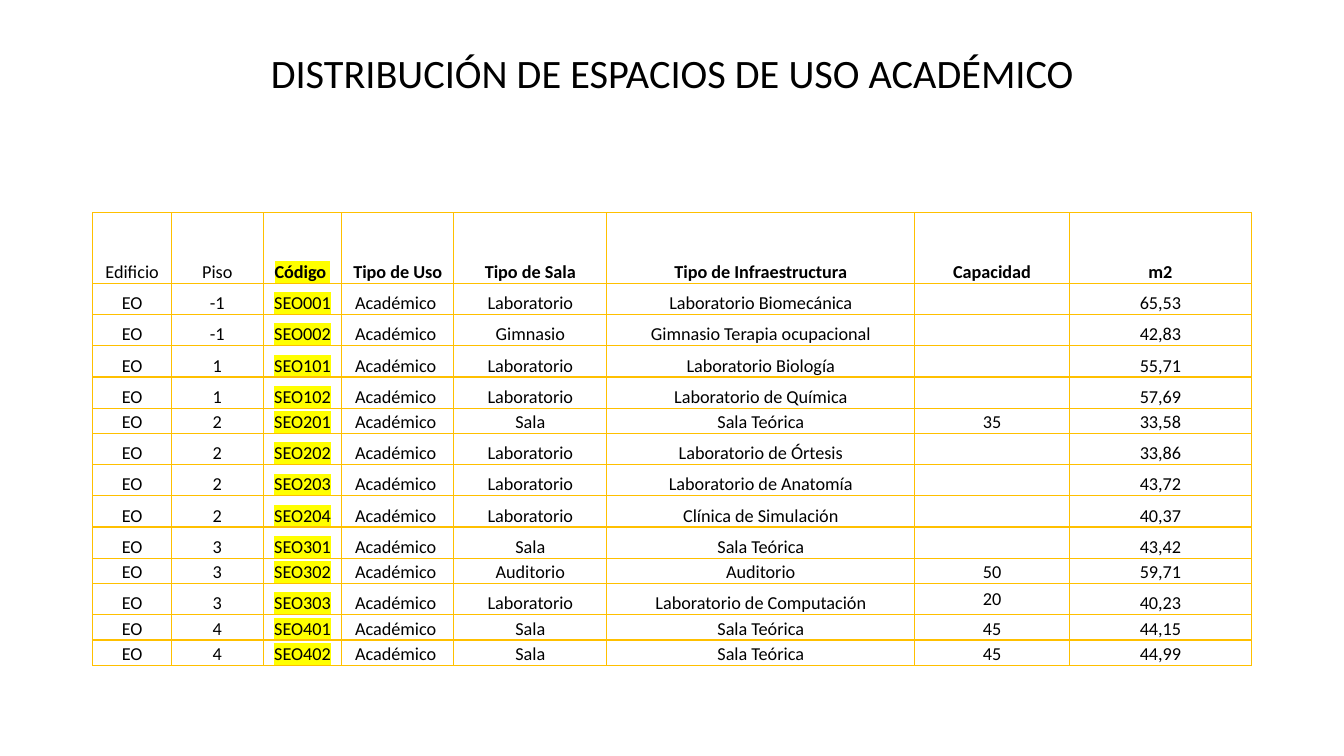
import dataclasses

import lxml.etree
import pptx
import pptx.dml.color
import pptx.enum.text
import pptx.oxml.ns
import pptx.table
import pptx.text.text
import pptx.util

Inches = pptx.util.Inches
Pt = pptx.util.Pt
qn = pptx.oxml.ns.qn
MSO_ANCHOR = pptx.enum.text.MSO_ANCHOR
PP_ALIGN = pptx.enum.text.PP_ALIGN

BLACK = pptx.dml.color.RGBColor(0x00, 0x00, 0x00)
YELLOW = pptx.dml.color.RGBColor(0xFF, 0xFF, 0x00)
GOLD = pptx.dml.color.RGBColor(0xFF, 0xC0, 0x00)
FONT = "Calibri"

HEADERS = ("Edificio", "Piso", "Código ", "Tipo de Uso", "Tipo de Sala",
           "Tipo de Infraestructura", "Capacidad", "m2")
COLUMN_WIDTHS = (0.78, 0.91, 0.78, 1.11, 1.52, 3.05, 1.54, 1.8)
CODE_COLUMN = HEADERS.index("Código ")
CAPACITY_COLUMN = HEADERS.index("Capacidad")
HEADER_HEIGHT = 0.7
TALL_ROW = 0.31
SHORT_ROW = 0.25


@dataclasses.dataclass(frozen=True)
class Room:
    floor: str
    code: str
    kind: str
    facility: str
    area: str
    capacity: str = ""
    height: float = TALL_ROW
    capacity_anchor: MSO_ANCHOR = MSO_ANCHOR.BOTTOM

    def cells(self) -> tuple[str, ...]:
        return ("EO", self.floor, self.code, "Académico ", self.kind,
                self.facility, self.capacity, self.area)


ROOMS = (
    Room("-1", "SEO001", "Laboratorio", "Laboratorio Biomecánica", "65,53"),
    Room("-1", "SEO002", "Gimnasio", "Gimnasio Terapia ocupacional", "42,83"),
    Room("1", "SEO101", "Laboratorio", "Laboratorio Biología", "55,71"),
    Room("1", "SEO102", "Laboratorio", "Laboratorio de Química", "57,69"),
    Room("2", "SEO201", "Sala", "Sala Teórica", "33,58", "35", SHORT_ROW),
    Room("2", "SEO202", "Laboratorio", "Laboratorio de Órtesis", "33,86"),
    Room("2", "SEO203", "Laboratorio", "Laboratorio de Anatomía", "43,72"),
    Room("2", "SEO204", "Laboratorio", "Clínica de Simulación", "40,37"),
    Room("3", "SEO301", "Sala", "Sala Teórica", "43,42"),
    Room("3", "SEO302", "Auditorio", "Auditorio", "59,71", "50", SHORT_ROW),
    Room("3", "SEO303", "Laboratorio", "Laboratorio de Computación", "40,23", "20",
         capacity_anchor=MSO_ANCHOR.MIDDLE),
    Room("4", "SEO401", "Sala", "Sala Teórica", "44,15", "45", SHORT_ROW),
    Room("4", "SEO402", "Sala", "Sala Teórica", "44,99", "45", SHORT_ROW),
)


def add_run(paragraph: pptx.text.text._Paragraph, text: str, size: float,
            bold: bool = False, highlighted: bool = False) -> None:
    run = paragraph.add_run()
    run.text = text
    run.font.size = Pt(size)
    run.font.bold = bold
    run.font.color.rgb = BLACK
    if highlighted:
        highlight = lxml.etree.SubElement(run.font._element, qn("a:highlight"))
        lxml.etree.SubElement(highlight, qn("a:srgbClr"), val=str(YELLOW))
    run.font.name = FONT


def add_borders(cell: pptx.table._Cell) -> None:
    properties = cell._tc.get_or_add_tcPr()
    for side in ("a:lnL", "a:lnR", "a:lnT", "a:lnB"):
        line = lxml.etree.SubElement(properties, qn(side), w=str(Pt(1)))
        fill = lxml.etree.SubElement(line, qn("a:solidFill"))
        lxml.etree.SubElement(fill, qn("a:srgbClr"), val=str(GOLD))


def fill_cell(cell: pptx.table._Cell, text: str, bold: bool, highlighted: bool,
              anchor: MSO_ANCHOR) -> None:
    add_borders(cell)
    cell.fill.background()
    cell.margin_left = cell.margin_right = cell.margin_top = Inches(0.01)
    cell.margin_bottom = 0
    cell.vertical_anchor = anchor
    paragraph = cell.text_frame.paragraphs[0]
    paragraph.alignment = PP_ALIGN.CENTER
    if text:
        add_run(paragraph, text, 13, bold, highlighted)
    else:
        paragraph.font.size = Pt(13)


def add_title(slide: pptx.slide.Slide) -> None:
    title = slide.shapes.title
    title.left, title.top = Inches(1.76), Inches(0.53)
    title.width, title.height = Inches(9.82), Inches(0.86)
    frame = title.text_frame
    frame.word_wrap = True
    frame.auto_size = pptx.enum.text.MSO_AUTO_SIZE.NONE
    frame.margin_top = 0
    frame.vertical_anchor = MSO_ANCHOR.TOP
    heading = frame.paragraphs[0]
    heading.alignment = PP_ALIGN.CENTER
    heading.line_spacing = 0.9
    add_run(heading, "DISTRIBUCIÓN DE ESPACIOS DE USO ACADÉMICO", 28.8)


def add_room_table(slide: pptx.slide.Slide) -> None:
    heights = [HEADER_HEIGHT] + [room.height for room in ROOMS]
    table = slide.shapes.add_table(
        len(heights), len(HEADERS), Inches(0.92), Inches(2.11),
        Inches(sum(COLUMN_WIDTHS)), Inches(sum(heights))).table
    table.first_row = False
    table.horz_banding = False
    for column, width in zip(table.columns, COLUMN_WIDTHS):
        column.width = Inches(width)
    for row, height in zip(table.rows, heights):
        row.height = Inches(height)

    for index, header in enumerate(HEADERS):
        fill_cell(table.cell(0, index), header, index >= CODE_COLUMN,
                  index == CODE_COLUMN, MSO_ANCHOR.BOTTOM)
    for row_index, room in enumerate(ROOMS, start=1):
        for index, text in enumerate(room.cells()):
            anchor = room.capacity_anchor if index == CAPACITY_COLUMN else MSO_ANCHOR.BOTTOM
            fill_cell(table.cell(row_index, index), text, False,
                      index == CODE_COLUMN, anchor)


def main() -> None:
    presentation = pptx.Presentation()
    presentation.slide_width = Inches(13.33)
    presentation.slide_height = Inches(7.5)
    slide = presentation.slides.add_slide(presentation.slide_layouts[5])
    add_title(slide)
    add_room_table(slide)
    presentation.save("out.pptx")


if __name__ == "__main__":
    main()
